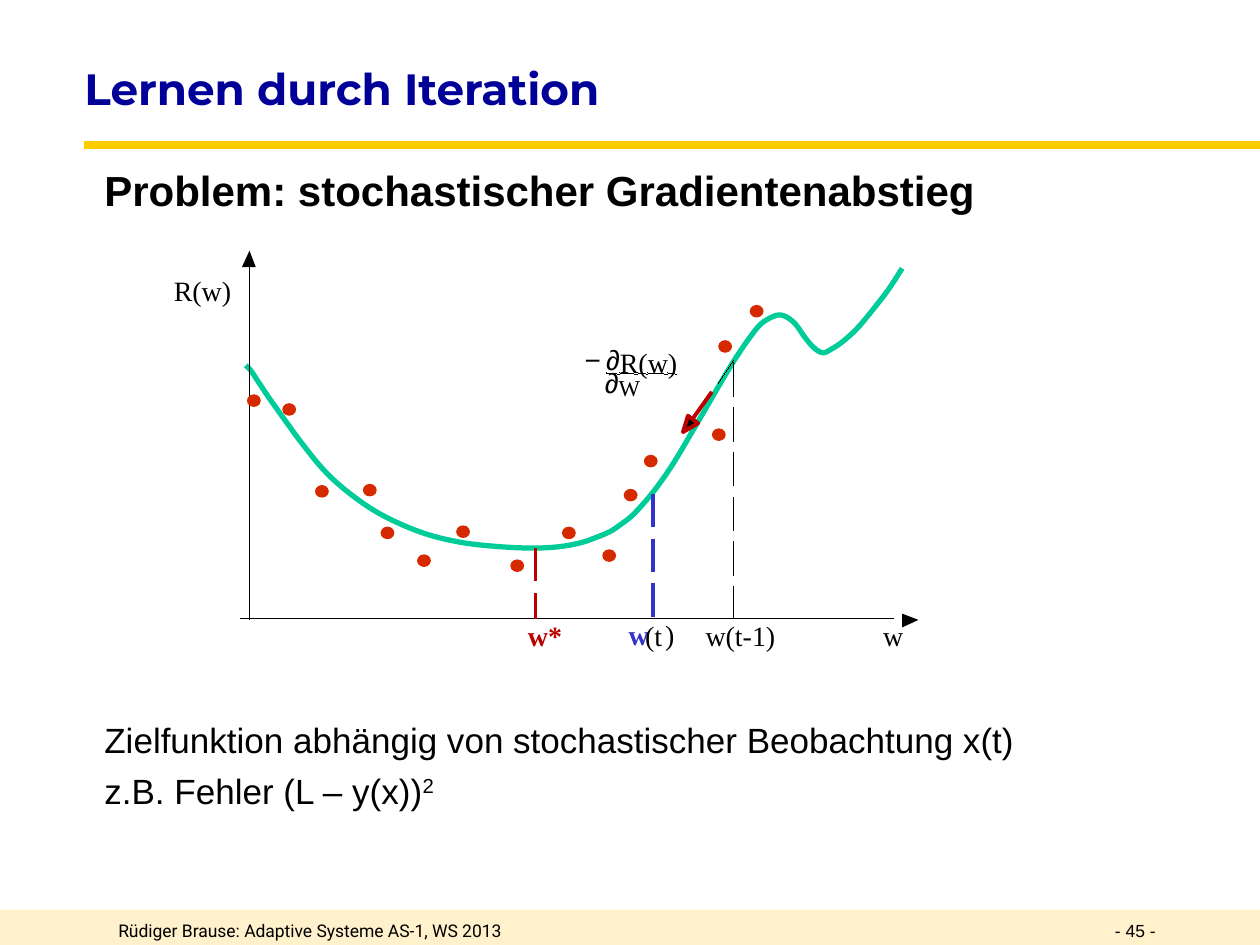
import itertools
from typing import NamedTuple

import lxml.etree
import pptx
import pptx.dml.color
import pptx.enum.shapes
import pptx.enum.text
import pptx.oxml.ns
import pptx.util

Inches = pptx.util.Inches
Pt = pptx.util.Pt
Align = pptx.enum.text.PP_ALIGN
Anchor = pptx.enum.text.MSO_ANCHOR
Fit = pptx.enum.text.MSO_AUTO_SIZE
Kind = pptx.enum.shapes.MSO_SHAPE
qn = pptx.oxml.ns.qn

BLACK, RED, BLUE = "000000", "BC0000", "3333CC"
GREEN, DOT, NAVY, GOLD, CREAM = "00CC99", "D62900", "000099", "FFCC00", "FFE499"
SERIF = "Times New Roman"
BASE = 4.91  # height of the w axis
DASH, STEP = 0.265, 0.355
HAIR = 0.01  # thinnest line, in points


class Label(NamedTuple):
    text: str
    x: float
    y: float
    w: float
    font: str = SERIF
    color: str = BLACK
    bold: bool = False
    size: int = 16


class Drop(NamedTuple):
    """Dashed line from the curve down to the w axis."""
    x: float
    top: float
    color: str
    width: float


LABELS = [
    Label("R(w)", 1.38, 2.17, 0.5),
    Label("−", 4.64, 2.72, 0.12, "Arial"),
    Label("∂", 4.81, 2.72, 0.11, "Arial"),
    Label("R(w)", 4.92, 2.74, 0.5),
    Label("∂", 4.8, 2.9, 0.11, "Arial"),
    Label("W", 4.91, 2.97, 0.17, size=13),
    Label("w*", 4.19, BASE, 0.32, SERIF, RED, True),
    Label("w", 4.99, 4.9, 0.16, SERIF, BLUE, True),
    Label("(t", 5.12, BASE, 0.18),
    Label(")", 5.28, 4.9, 0.07),
    Label("w(t-1)", 5.6, BASE, 0.6),
    Label("w", 7.01, BASE, 0.16),
]
DROPS = [
    Drop(5.82, 2.88, BLACK, HAIR),
    Drop(4.25, 4.35, RED, 2.25),
    Drop(5.18, 3.92, BLUE, 2.25),
]
BAR = [4.81, 4.92, 5.06, 5.14, 5.3, 5.37]  # fraction bar, one part a sign
CURVE = [
    (1.95, 2.9), (1.99, 2.94), (2.05, 3.03), (2.13, 3.15), (2.28, 3.36),
    (2.39, 3.51), (2.56, 3.72), (2.73, 3.88), (2.95, 4.04), (3.18, 4.16),
    (3.42, 4.25), (3.69, 4.31), (3.98, 4.34), (4.23, 4.35), (4.43, 4.34),
    (4.6, 4.31), (4.72, 4.27), (4.84, 4.22), (4.93, 4.16), (5.03, 4.08),
    (5.18, 3.91), (5.33, 3.7), (5.48, 3.45), (5.62, 3.21), (5.76, 2.97),
    (5.86, 2.81), (5.95, 2.68), (6.03, 2.58), (6.1, 2.53), (6.18, 2.5),
    (6.25, 2.52), (6.32, 2.58), (6.39, 2.68), (6.46, 2.76), (6.53, 2.8),
    (6.6, 2.77), (6.69, 2.71), (6.8, 2.61), (6.91, 2.48), (7.05, 2.3),
    (7.16, 2.13),
]
UP_TIP = [(1.92, 2.12), (2.03, 2.12), (1.98, 1.99)]
SIDE_TIP = [(7.16, 4.98), (7.29, 4.92), (7.16, 4.87)]
STEP_TIP = [(5.46, 3.3), (5.42, 3.43), (5.54, 3.36)]
DOTS = [
    (2.5, 3.85), (2.88, 3.84), (2.24, 3.2), (1.96, 3.13), (3.62, 4.17),
    (4.05, 4.44), (5.11, 3.61), (4.78, 4.36), (5.65, 3.4), (5.95, 2.42),
    (4.95, 3.88), (3.02, 4.18), (3.31, 4.4), (5.7, 2.7), (4.46, 4.18),
]


def rgb(code: str):
    return pptx.dml.color.RGBColor.from_string(code)


def apply(item, **values) -> None:
    for name, value in values.items():
        setattr(item, name, value)


def style(font, name: str, size: float, color: str, bold: bool = False) -> None:
    apply(font, name=name, size=Pt(size), bold=bold)
    font.color.rgb = rgb(color)


def paint(shape, fill: str = "", line: str = "", width: float = HAIR) -> None:
    """Set fill and outline; an empty colour means none."""
    shape.shadow.inherit = False
    if fill:
        shape.fill.solid()
        shape.fill.fore_color.rgb = rgb(fill)
    else:
        shape.fill.background()
    if line:
        shape.line.color.rgb = rgb(line)
        shape.line.width = Pt(width)
    else:
        shape.line.fill.background()


def rule(slide, x1: float, y1: float, x2: float, y2: float,
         color: str = BLACK, width: float = HAIR) -> None:
    """Draw a straight line."""
    line = slide.shapes.add_connector(
        pptx.enum.shapes.MSO_CONNECTOR.STRAIGHT,
        Inches(x1), Inches(y1), Inches(x2), Inches(y2))
    line.line.color.rgb = rgb(color)
    line.line.width = Pt(width)
    lxml.etree.SubElement(line._element.spPr, qn("a:effectLst"))


def smooth(knots: list, parts: int = 4) -> list:
    """Put a Catmull-Rom curve through the knots."""
    ends = [knots[0], *knots, knots[-1]]
    points = []
    for quad in zip(ends, ends[1:], ends[2:], ends[3:]):
        for t in (i / parts for i in range(parts)):
            points.append(tuple(
                b + t * (c - a + t * (2 * a - 5 * b + 4 * c - d
                                      + t * (3 * b - a - 3 * c + d))) / 2
                for a, b, c, d in zip(*quad)))
    return points + [knots[-1]]


def trace(slide, points: list, close: bool = True):
    """Build an outline through points given in inches."""
    spots = [(Inches(x), Inches(y)) for x, y in points]
    pen = slide.shapes.build_freeform(*spots[0])
    pen.add_line_segments(spots[1:], close=close)
    return pen.convert_to_shape()


def box(slide, x: float, y: float, w: float, h: float):
    """Add a wrapped text box and return its frame."""
    frame = slide.shapes.add_textbox(
        Inches(x), Inches(y), Inches(w), Inches(h)).text_frame
    frame.word_wrap = True
    return frame


def write(par, text: str, *look):
    run = par.add_run()
    run.text = text
    style(run.font, *look)
    return run


def label(slide, item: Label) -> None:
    frame = box(slide, item.x, item.y, item.w, item.size / 60)
    apply(frame, margin_left=0, margin_right=0, margin_top=0, margin_bottom=0,
          word_wrap=False, auto_size=Fit.SHAPE_TO_FIT_TEXT)
    write(frame.paragraphs[0], item.text, item.font, item.size, item.color, item.bold)


def drop(slide, item: Drop) -> None:
    top = item.top
    while top < BASE:
        rule(slide, item.x, top, item.x, min(top + DASH, BASE), item.color, item.width)
        top += STEP


def frame_page(slide) -> None:
    """Draw the title, the rule below it and the footer."""
    band = slide.shapes.add_shape(
        Kind.RECTANGLE, 0, Inches(7.22), Inches(10), Inches(0.28))
    paint(band, CREAM)
    tint = band._element.spPr.find(qn("a:solidFill"))[0]
    lxml.etree.SubElement(tint, qn("a:alpha"), val="50000")
    rule(slide, 0.67, 1.15, 10, 1.15, GOLD, 4.5)

    title = slide.shapes.title
    apply(title, left=Inches(0.67), top=Inches(0.42),
          width=Inches(7.24), height=Inches(0.55))
    apply(title.text_frame, margin_left=0, word_wrap=False,
          auto_size=Fit.NONE, vertical_anchor=Anchor.MIDDLE)
    par = title.text_frame.paragraphs[0]
    par.alignment = Align.LEFT
    write(par, "Lernen durch Iteration", "Montserrat", 25, NAVY, True)

    foot = box(slide, 0.84, 7.25, 5.42, 0.25).paragraphs[0]
    write(foot, "Rüdiger Brause: Adaptive Systeme AS-1, WS 2013", "Roboto", 10, BLACK)
    page = box(slide, 8.75, 7.25, 0.75, 0.25).paragraphs[0]
    write(page, "- 45 -", "Arial", 10, BLACK)


def body(slide) -> None:
    frame = box(slide, 0.73, 1.32, 9.01, 5.67)
    rows = [
        ("Problem: stochastischer Gradientenabstieg", 24, True, 0),
        ("Zielfunktion abhängig von stochastischer Beobachtung x(t)", 20, False, 291.3),
        ("z.B. Fehler (L – y(x))", 20, False, 8.5),
    ]
    for i, (text, size, bold, gap) in enumerate(rows):
        par = frame.add_paragraph() if i else frame.paragraphs[0]
        apply(par, line_spacing=0.85, space_before=Pt(gap))
        write(par, text, "Arial", size, BLACK, bold)
    power = write(par, "2", "Arial", 20, BLACK)
    power._r.get_or_add_rPr().set("baseline", "30000")


def plot(slide) -> None:
    paint(trace(slide, smooth(CURVE), close=False), line=GREEN, width=3)
    for item in LABELS:
        label(slide, item)
    for left, right in itertools.pairwise(BAR):
        rule(slide, left, 2.96, right, 2.97)
    for tip in (UP_TIP, SIDE_TIP):
        paint(trace(slide, tip), BLACK)
    rule(slide, 1.98, 2.12, 1.98, 4.92)
    rule(slide, 1.91, BASE, 7.09, BASE)
    for item in DROPS:
        drop(slide, item)
    paint(trace(slide, STEP_TIP), BLACK, RED, 2.25)
    rule(slide, 5.5, 3.32, 5.65, 3.11, RED, 2.25)
    rule(slide, 5.7, 3.04, 5.82, 2.86)
    for x, y in DOTS:
        dot = slide.shapes.add_shape(
            Kind.OVAL, Inches(x), Inches(y), Inches(0.11), Inches(0.1))
        paint(dot, DOT)


def main() -> None:
    deck = pptx.Presentation()
    apply(deck, slide_width=Inches(10), slide_height=Inches(7.5))
    slide = deck.slides.add_slide(deck.slide_layouts[5])
    frame_page(slide)
    body(slide)
    plot(slide)
    deck.save("out.pptx")


if __name__ == "__main__":
    main()
